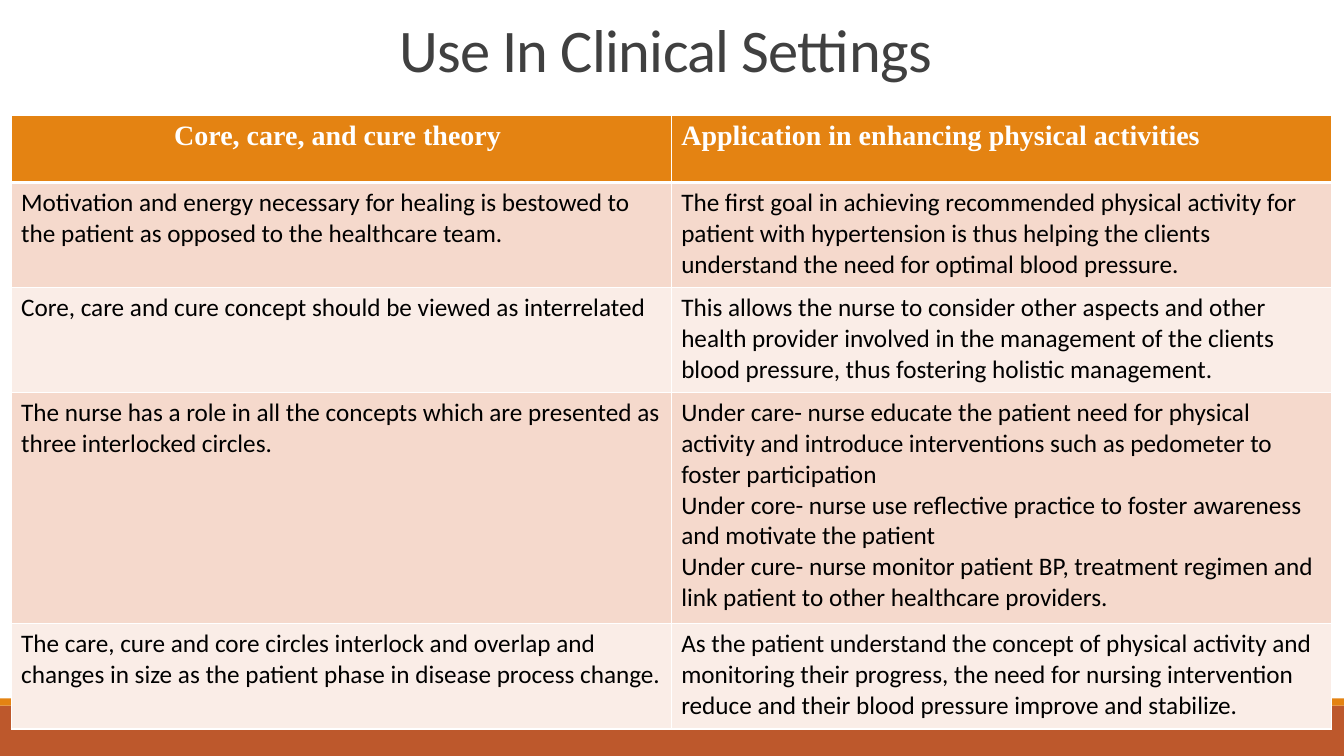
from lxml.etree import SubElement
from pptx import Presentation
from pptx.dml.color import RGBColor
from pptx.enum.shapes import MSO_SHAPE
from pptx.enum.text import MSO_ANCHOR, PP_ALIGN
from pptx.oxml.ns import qn
from pptx.util import Cm, Pt

WHITE = RGBColor(0xFF, 0xFF, 0xFF)
BLACK = RGBColor(0x00, 0x00, 0x00)
GREY = RGBColor(0x40, 0x40, 0x40)
ORANGE = RGBColor(0xE4, 0x83, 0x12)
RUST = RGBColor(0xBD, 0x58, 0x2C)
PEACH = RGBColor(0xF5, 0xD9, 0xCC)
PALE = RGBColor(0xFA, 0xED, 0xE7)

TITLE_FONT = {"name": "Calibri", "size": Pt(43.2), "bold": False}
HEADER_FONT = {"name": "Times New Roman", "size": Pt(20), "bold": True}
BODY_FONT = {"name": "Calibri", "size": Pt(18), "bold": False}

HEADERS = ["Core, care, and cure theory ", "Application in enhancing physical activities"]
BODY = [
    ["Motivation and energy necessary for healing is bestowed to the patient as opposed to the healthcare team.",
     "The first goal in achieving recommended physical activity for patient with hypertension is thus helping "
     "the clients understand the need for optimal blood pressure."],
    ["Core, care and cure concept should be viewed as interrelated",
     "This allows the nurse to consider other aspects and other health provider involved in the management of "
     "the clients blood pressure, thus fostering holistic management."],
    ["The nurse has a role in all the concepts which are presented as three interlocked circles.",
     "Under care- nurse educate the patient need for physical activity and introduce interventions such as "
     "pedometer to foster participation\n"
     "Under core- nurse use reflective practice to foster awareness and motivate the patient\n"
     "Under cure- nurse monitor patient BP, treatment regimen and link patient to other healthcare providers."],
    ["The care, cure and core circles interlock and overlap and changes in size as the patient phase in "
     "disease process change.",
     "As the patient understand the concept of physical activity and monitoring their progress, the need for "
     "nursing intervention reduce and their blood pressure improve and stabilize."],
]
ROW_HEIGHTS = [1.7, 2.65, 2.65, 5.82, 2.65]


def format_font(font, values, color):
    for name, value in values.items():
        setattr(font, name, value)
    font.color.rgb = color


def add_title(s, left, top, width, height):
    title = s.shapes.title
    box = {"left": left, "top": top, "width": width, "height": height}
    for name, value in box.items():
        setattr(title, name, Cm(value))
    tf = title.text_frame
    tf.word_wrap = True
    tf.vertical_anchor = MSO_ANCHOR.BOTTOM
    p = tf.paragraphs[0]
    p.alignment = PP_ALIGN.CENTER
    p.line_spacing = 0.85
    r = p.add_run()
    r.text = "Use In Clinical Settings "
    format_font(r.font, TITLE_FONT, GREY)
    r.font._element.set("spc", "-50")


def add_footer(s, left, top, width, height):
    stripe = 0.18
    for y, h, color in [(top + stripe, height - stripe, RUST), (top, stripe, ORANGE)]:
        band = s.shapes.add_shape(MSO_SHAPE.RECTANGLE, Cm(left), Cm(y), Cm(width), Cm(h))
        band.shadow.inherit = False
        band.fill.solid()
        band.fill.fore_color.rgb = color
        band.line.fill.background()


def set_borders(cell, widths):
    tc_pr = cell._tc.get_or_add_tcPr()
    for side, width in widths.items():
        line = SubElement(tc_pr, qn(f"a:ln{side}"), w=str(Pt(width)))
        fill = SubElement(line, qn("a:solidFill"))
        SubElement(fill, qn("a:srgbClr"), val=str(WHITE))


def fill_cell(cell, text, values, color, background, align):
    cell.text = text
    for p in cell.text_frame.paragraphs:
        p.alignment = align
        for r in p.runs:
            format_font(r.font, values, color)
    cell.fill.solid()
    cell.fill.fore_color.rgb = background


def add_theory_table(s, left, top, width):
    rows = [HEADERS] + BODY
    frame = s.shapes.add_table(len(rows), len(HEADERS), Cm(left), Cm(top), Cm(width), Cm(sum(ROW_HEIGHTS)))
    table = frame.table
    for column in table.columns:
        column.width = Cm(width / len(HEADERS))
    for i, (texts, height) in enumerate(zip(rows, ROW_HEIGHTS)):
        table.rows[i].height = Cm(height)
        for j, text in enumerate(texts):
            cell = table.cell(i, j)
            set_borders(cell, {"L": 1, "R": 1, "T": 3 if i == 1 else 1, "B": 3 if i == 0 else 1})
            if i == 0:
                align = PP_ALIGN.CENTER if j == 0 else PP_ALIGN.LEFT
                fill_cell(cell, text, HEADER_FONT, WHITE, ORANGE, align)
            else:
                fill_cell(cell, text, BODY_FONT, BLACK, PEACH if i % 2 else PALE, PP_ALIGN.LEFT)


def main():
    prs = Presentation()
    prs.slide_width, prs.slide_height = Cm(33.87), Cm(19.05)
    s = prs.slides.add_slide(prs.slide_layouts[5])
    add_footer(s, 0, 17.6, 33.87, 1.45)
    add_title(s, 2.33, 1.02, 29.21, 1.24)
    add_theory_table(s, 0.28, 2.9, 33.27)
    prs.save("out.pptx")


if __name__ == "__main__":
    main()
